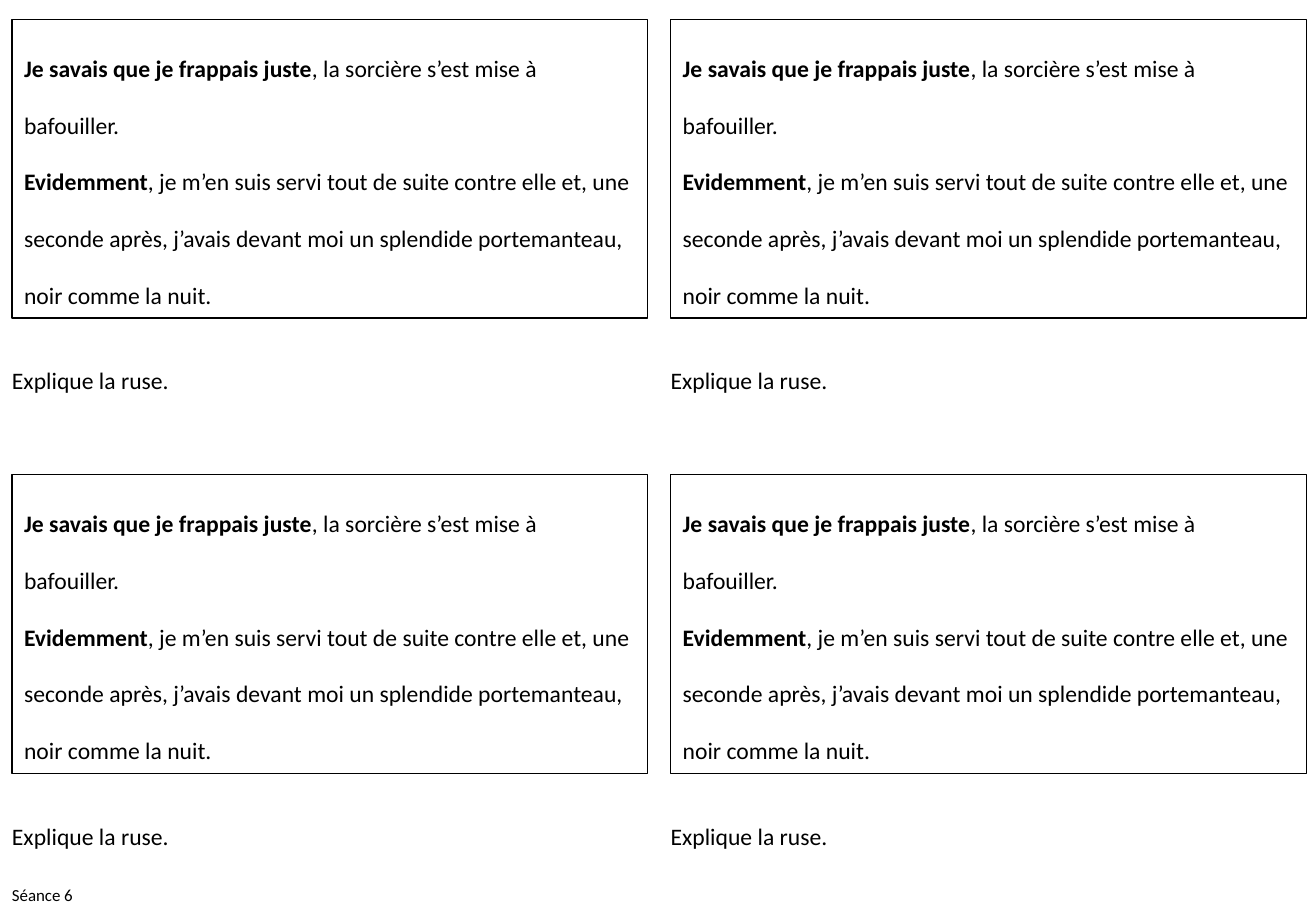
import pptx
import pptx.dml.color
import pptx.enum.shapes
import pptx.enum.text
import pptx.util

EMU_PER_PX = 9144  # 100 px to the inch
SLIDE_SIZE = (1083, 750)
COLUMN_LEFTS = (0, 542)
ROW_TOPS = (16, 391)

STORY = [
    [("Je savais que je frappais juste", True),
     (", la sorcière s’est mise à bafouiller.", False)],
    [("Evidemment", True),
     (", je m’en suis servi tout de suite contre elle et, une seconde après, "
      "j’avais devant moi un splendide portemanteau, noir comme la nuit.", False)],
]
QUESTION = [[("Explique la ruse.", False)]]
SESSION = [[("Séance 6", False)]]


def px(length):
    return pptx.util.Emu(length * EMU_PER_PX)


def color(hex_string):
    return pptx.dml.color.RGBColor.from_string(hex_string)


def set_format(target, values):
    for name, value in values.items():
        setattr(target, name, value)


class Worksheet:
    ink = "000000"
    font = "Calibri"

    def __init__(self, slide):
        self.slide = slide

    def fill_text(self, shape, paragraphs, size, spacing, wrap=True):
        """Fill a shape with paragraphs, each a list of (text, bold) runs."""
        frame = shape.text_frame
        set_format(frame, {
            "word_wrap": wrap,
            "auto_size": pptx.enum.text.MSO_AUTO_SIZE.SHAPE_TO_FIT_TEXT,
            "vertical_anchor": pptx.enum.text.MSO_ANCHOR.TOP,
        })
        for index, runs in enumerate(paragraphs):
            paragraph = frame.add_paragraph() if index else frame.paragraphs[0]
            set_format(paragraph, {
                "alignment": pptx.enum.text.PP_ALIGN.LEFT,
                "line_spacing": spacing,
            })
            for text, bold in runs:
                run = paragraph.add_run()
                run.text = text
                set_format(run.font, {
                    "name": self.font,
                    "size": pptx.util.Pt(size),
                    "bold": bold,
                })
                run.font.color.rgb = color(self.ink)

    def framed_text(self, box, paragraphs, size=14, spacing=2.0):
        shape = self.slide.shapes.add_shape(
            pptx.enum.shapes.MSO_SHAPE.RECTANGLE, *map(px, box))
        shape.shadow.inherit = False
        shape.fill.background()
        shape.line.color.rgb = color(self.ink)
        shape.line.width = pptx.util.Pt(0.75)
        self.fill_text(shape, paragraphs, size, spacing)

    def plain_text(self, box, paragraphs, size=14, spacing=2.0, wrap=True):
        shape = self.slide.shapes.add_textbox(*map(px, box))
        self.fill_text(shape, paragraphs, size, spacing, wrap)


def main():
    presentation = pptx.Presentation()
    presentation.slide_width, presentation.slide_height = map(px, SLIDE_SIZE)
    slide = presentation.slides.add_slide(presentation.slide_layouts[6])
    worksheet = Worksheet(slide)

    for left in COLUMN_LEFTS:
        for top in ROW_TOPS:
            worksheet.framed_text((left + 10, top, 523, 246), STORY)
            worksheet.plain_text((left, top + 257, 542, 51), QUESTION)
    worksheet.plain_text((0, 723, 71, 27), SESSION, size=10, spacing=1.0, wrap=False)

    presentation.save("out.pptx")


if __name__ == "__main__":
    main()
